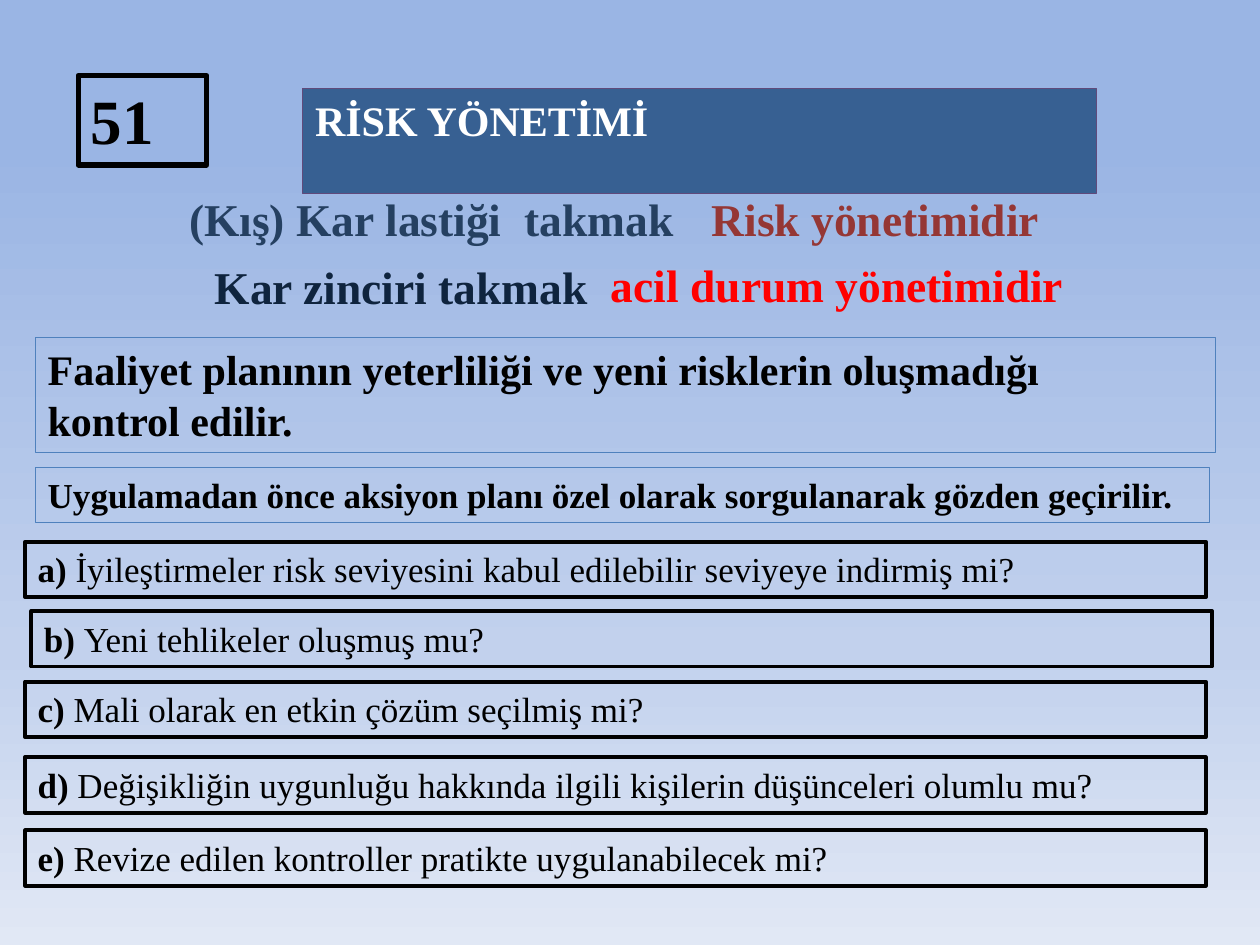
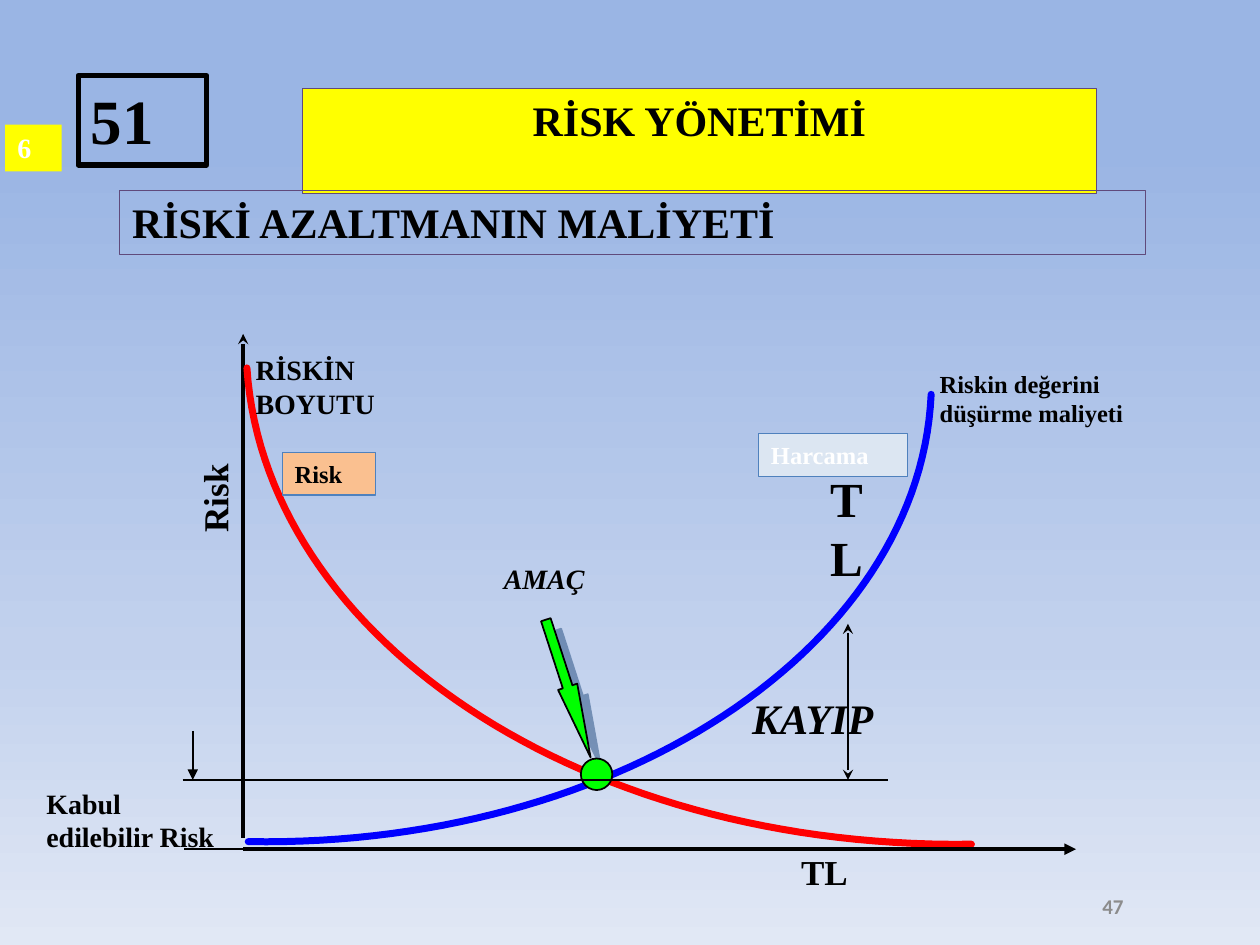
import pptx
import pptx.util
import pptx.dml.color
import pptx.enum.shapes
import pptx.enum.text
import pptx.oxml
import pptx.oxml.ns
from lxml import etree

SHAPES = pptx.enum.shapes.MSO_SHAPE
ALIGN = pptx.enum.text.PP_ALIGN
COLS, ROWS = 100, 75
BLACK, WHITE, YELLOW, GREEN = "000000", "FFFFFF", "FFFF00", "00FF00"
BLUE_EDGE, PURPLE_EDGE = "4F81BD", "604A7B"
SKY = [(0, "9AB5E4"), (15, "9AB5E4"), (69, "C2D1ED"), (100, "E1E8F5")]


def rgb(color):
    return pptx.dml.color.RGBColor.from_string(color)


def sub(parent, tag, **attrs):
    """Append a drawing element to an XML parent."""
    return etree.SubElement(parent, pptx.oxml.ns.qn(tag), attrs)


class Deck:
    """Shared style plus the slide being built; lengths are grid columns and rows."""

    font = "Times New Roman"

    def __init__(self):
        self.prs = pptx.Presentation()
        self.prs.slide_width = pptx.util.Inches(10)
        self.prs.slide_height = pptx.util.Inches(7.5)
        self.col = self.prs.slide_width / COLS
        self.row = self.prs.slide_height / ROWS
        self.s = None
        self.paint_background()

    def paint_background(self):
        fill = self.prs.slide_master.background.fill
        fill.gradient()
        fill.gradient_angle = 270
        stops = fill.gradient_stops[0]._gs.getparent()
        for gs in list(stops):
            stops.remove(gs)
        for share, color in SKY:
            gs = sub(stops, "a:gs", pos=str(share * 1000))
            sub(gs, "a:srgbClr", val=color)

    def place(self, x, y):
        return round(x * self.col), round(y * self.row)

    def area(self, x, y, w, h):
        return *self.place(x, y), *self.place(w, h)

    def new_slide(self, title, color, fill, align=ALIGN.LEFT):
        """Start a slide with its title band and the numbered frame."""
        self.s = self.prs.slides.add_slide(self.prs.slide_layouts[5])
        sp = self.s.shapes.title
        sp.left, sp.top, sp.width, sp.height = self.area(24, 7, 63, 5.1)
        self.paint(sp, fill, PURPLE_EDGE, 0.75)
        self.set_text(sp, title, 24, color, align=align)
        self.box((6.2, 6, 10.2, 7.1), "51", 36, line=BLACK, width=3)

    def paint(self, sp, fill=None, line=None, width=1):
        if fill:
            sp.fill.solid()
            sp.fill.fore_color.rgb = rgb(fill)
        else:
            sp.fill.background()
        if line:
            sp.line.color.rgb = rgb(line)
            sp.line.width = pptx.util.Pt(width)
        else:
            sp.line.fill.background()

    def set_text(self, sp, text, size, color=BLACK, align=ALIGN.LEFT, lead="",
                 italic=False, font=None):
        """Fill a shape with bold text, or with a bold lead and plain text."""
        tf = sp.text_frame
        tf.word_wrap = True
        tf.auto_size = pptx.enum.text.MSO_AUTO_SIZE.SHAPE_TO_FIT_TEXT
        tf.vertical_anchor = pptx.enum.text.MSO_ANCHOR.TOP
        p = tf.paragraphs[0]
        if lead:
            for part in (lead, text):
                r = p.add_run()
                r.text = part
                r.font.bold = part == lead
        else:
            p.text = text
            p.font.bold = True
        p.alignment = align
        p.font.name = font or self.font
        p.font.size = pptx.util.Pt(size)
        p.font.color.rgb = rgb(color)
        p.font.italic = italic

    def shape(self, kind, at, fill=None, line=None, width=1):
        sp = self.s.shapes.add_shape(kind, *self.area(*at))
        sp.shadow.inherit = False
        self.paint(sp, fill, line, width)
        return sp

    def box(self, at, text, size, color=BLACK, fill=None, line=None, width=0.75, lead=""):
        sp = self.shape(SHAPES.RECTANGLE, at, fill, line, width)
        self.set_text(sp, text, size, color, lead=lead)

    def label(self, at, text, size, color=BLACK, **style):
        sp = self.s.shapes.add_textbox(*self.area(*at))
        self.set_text(sp, text, size, color, **style)
        return sp

    def line(self, start, end, width=1, head=None, tail=None):
        cn = self.s.shapes.add_connector(
            pptx.enum.shapes.MSO_CONNECTOR.STRAIGHT, *self.place(*start), *self.place(*end))
        cn.line.color.rgb = rgb(BLACK)
        cn.line.width = pptx.util.Pt(width)
        ln = cn.line._get_or_add_ln()
        for tag, kind in (("a:headEnd", head), ("a:tailEnd", tail)):
            if kind:
                sub(ln, tag, type=kind)
        sub(cn._element.spPr, "a:effectLst")

    def curve(self, a, b, c, d, color, steps=60):
        """Draw an open cubic curve from a to d, steered by b and c."""
        points = []
        for i in range(steps + 1):
            t = i / steps
            u = 1 - t
            weights = (u**3, 3 * u * u * t, 3 * u * t * t, t**3)
            points.append(self.place(*(
                sum(w * pt[axis] for w, pt in zip(weights, (a, b, c, d)))
                for axis in (0, 1))))
        fb = self.s.shapes.build_freeform(*points[0])
        fb.add_line_segments(points[1:], close=False)
        sp = fb.convert_to_shape()
        sp.shadow.inherit = False
        self.paint(sp, None, color, 4)
        sp.line._get_or_add_ln().set("cap", "rnd")

    def pointer(self, at, rotation):
        """Draw the green arrow with its offset shadow."""
        sp = self.shape(SHAPES.DOWN_ARROW, at, GREEN, BLACK)
        sp.adjustments[0], sp.adjustments[1] = 0.5, 3.69
        sp.rotation = rotation
        effects = sp._element.spPr.find(pptx.oxml.ns.qn("a:effectLst"))
        shadow = sub(effects, "a:outerShdw", blurRad="0",
                     dist=str(pptx.util.Pt(8.5)), dir=str(45 * 60000),
                     algn="ctr", rotWithShape="0")
        sub(sub(shadow, "a:srgbClr", val="1F497D"), "a:alpha", val="50000")


def questions_slide(deck):
    deck.new_slide("RİSK YÖNETİMİ", WHITE, "376092")

    # Winter tyre and snow chain examples
    deck.label((2.7, 14.7, 51.8, 5.4), "(Kış) Kar lastiği  takmak", 26, "254061",
               align=ALIGN.RIGHT)
    deck.label((2.8, 20.1, 44.9, 5.4), "Kar zinciri takmak", 26, "0F243E",
               align=ALIGN.RIGHT)
    deck.label((55.5, 14.7, 40.4, 5.4), "Risk yönetimidir", 26, "953735")
    deck.label((47.5, 19.9, 48.8, 5.4), "acil durum yönetimidir", 26, "FF0000")

    # Statements
    deck.box((2.8, 26.8, 93.7, 9.1),
             "Faaliyet planının yeterliliği ve yeni risklerin oluşmadığı\vkontrol edilir.",
             24, line=BLUE_EDGE)
    deck.box((2.8, 37.1, 93.2, 4.4),
             "Uygulamadan önce aksiyon planı özel olarak sorgulanarak gözden geçirilir.",
             20, line=BLUE_EDGE)

    # Review questions
    questions = [
        (2, 43, "a) ", "İyileştirmeler risk seviyesini kabul edilebilir seviyeye indirmiş mi?"),
        (2.5, 48.5, "b) ", "Yeni tehlikeler oluşmuş mu?"),
        (2, 54.1, "c) ", "Mali olarak en etkin çözüm seçilmiş mi?"),
        (2, 60.1, "d) ",
         "Değişikliğin uygunluğu hakkında ilgili kişilerin düşünceleri olumlu mu?"),
        (2, 65.9, "e) ", "Revize edilen kontroller pratikte uygulanabilecek mi?"),
    ]
    for x, y, lead, text in questions:
        deck.box((x, y, 93.7, 4.4), text, 20, line=BLACK, width=2.25, lead=lead)


def cost_slide(deck):
    deck.new_slide("RİSK YÖNETİMİ", BLACK, YELLOW, ALIGN.CENTER)
    deck.box((0.4, 9.9, 4.5, 3.7), "6", 16, WHITE, fill=YELLOW)
    deck.box((9.5, 15.1, 81.4, 5.1), "RİSKİ AZALTMANIN MALİYETİ", 24, line=PURPLE_EDGE)
    deck.label((86.5, 70.4, 12.6, 3), "47", 12, "8C8C8C", font="Calibri")

    # Risk axis, then the cost and risk curves
    deck.line((19.3, 26.5), (19.3, 66.5), 2, head="stealth")
    deck.curve((73.9, 31.3), (73, 51.5), (48.9, 67.3), (19.7, 66.8), "0000FF")
    deck.curve((77.1, 67), (45.8, 67.4), (21, 50.4), (19.6, 29.2), "FF0000")

    # Target point and loss span
    deck.pointer((44.3, 48.9, 1.6, 11.5), 342)
    deck.line((67.3, 61.9), (67.3, 49.5), head="stealth", tail="stealth")
    deck.shape(SHAPES.OVAL, (46.1, 60.2, 2.5, 2.5), GREEN, BLACK)

    # Acceptable level and money axis
    deck.line((14.5, 61.9), (70.5, 61.9))
    deck.line((19.3, 67.4), (14.6, 67.4))
    deck.line((15.3, 58), (15.3, 61.9), tail="triangle")
    deck.line((19.3, 67.4), (85.4, 67.4), 2.25, tail="triangle")

    # Labels
    deck.label((19.3, 27.5, 16.6, 3.7), "RİSKİN BOYUTU", 16)
    deck.label((73.6, 28.8, 22, 5.7), "Riskin değerini düşürme maliyeti", 14)
    deck.label((39, 44.1, 9.5, 3.7), "AMAÇ", 16, italic=True)
    deck.label((58.7, 54.5, 29.9, 5.1), "KAYIP", 24, italic=True)
    deck.label((2.7, 61.9, 16.6, 6.4), "Kabul edilebilir Risk", 16)
    deck.label((62.6, 67, 15.4, 4.4), "TL", 20)
    deck.label((11.8, 35.8, 10.5, 4.4), "Risk", 20).rotation = 270
    stacked = deck.label((64.9, 36.7, 7.2, 10.4), "TL", 28)
    stacked.text_frame.margin_right = round(3 * deck.col)
    deck.box((60.2, 34.4, 11.8, 3.4), "Harcama", 14, WHITE, fill="DCE6F2", line=BLUE_EDGE)
    deck.box((22.4, 35.9, 7.4, 3.4), "Risk", 14, fill="FAC090", line=BLUE_EDGE)


def main():
    deck = Deck()
    questions_slide(deck)
    cost_slide(deck)
    deck.prs.save("out.pptx")


if __name__ == "__main__":
    main()
